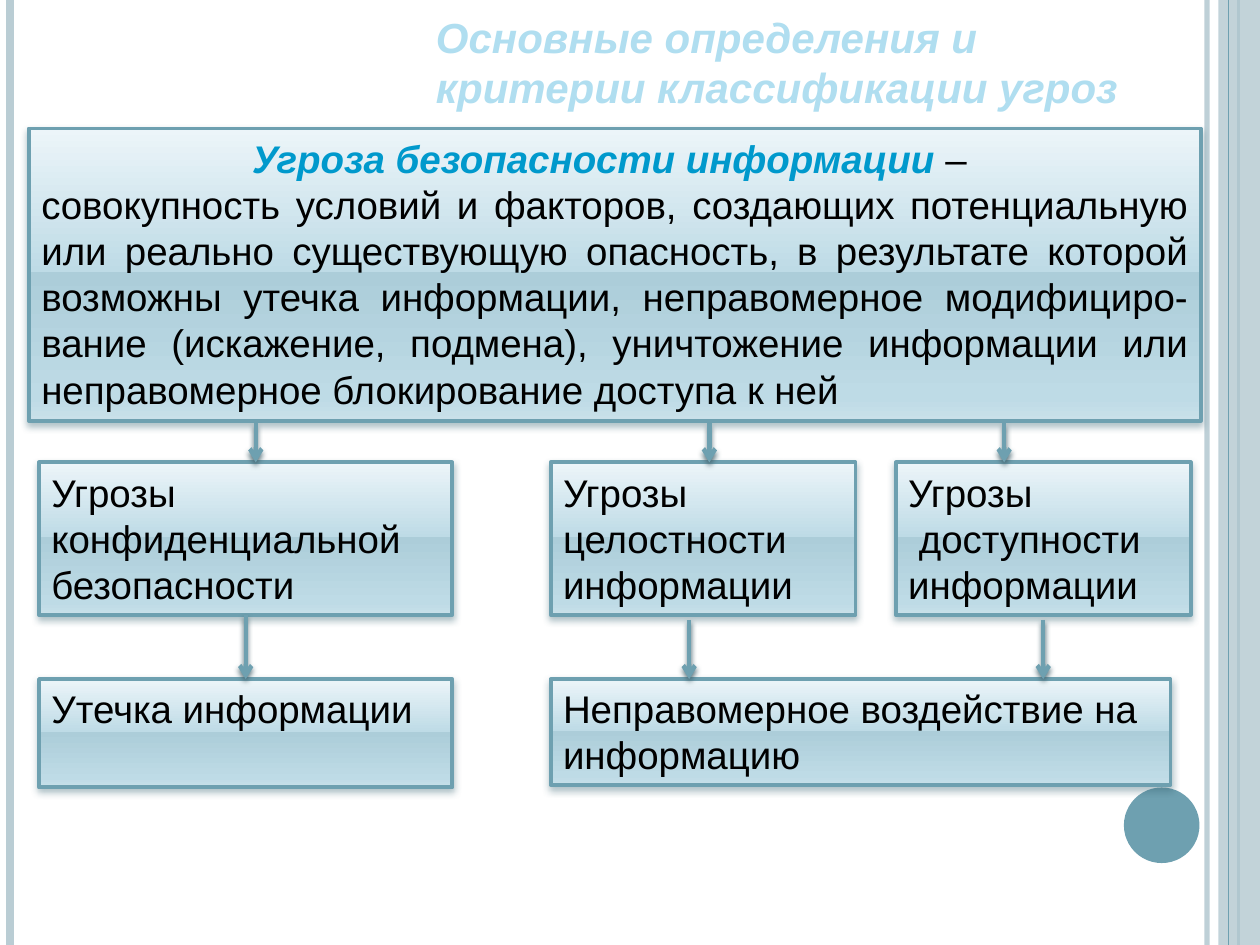
from dataclasses import dataclass, field
from typing import Optional

from lxml import etree
from pptx import Presentation
from pptx import util as u
from pptx.dml.color import RGBColor
from pptx.enum import shapes, text
from pptx.oxml.ns import qn

COLUMNS, ROWS = 100, 75
LEFT, CENTER, JUSTIFY = text.PP_ALIGN.LEFT, text.PP_ALIGN.CENTER, text.PP_ALIGN.JUSTIFY


@dataclass(frozen=True)
class Theme:
    font: str = "Arial"
    title_size: float = 24
    body_size: float = 22
    ink: str = "000000"
    term: str = "0099CC"
    accent: str = "6EA0B0"
    rail: str = "BACDD4"
    title_outline: str = "6599AA"
    title_stops: tuple = ((0, "C9E4EF"), (9, "B0DEF0"), (50, "166078"), (79, "B0DEF0"), (100, "C9E4EF"))
    box_stops: tuple = ((0, "ECF5F9"), (49, "BEDBE6"), (49, "ACCDD9"), (92, "BEDBE6"), (100, "C9E0E9"))
    box_shadow: tuple = ("376472", 38, 4, 2)  # colour, opacity %, blur pt, distance pt
    arrow_shadow: tuple = ("44636D", 83, 3.1, 2)
    box_line: float = 2.25
    arrow_line: float = 2.5


THEME = Theme()


@dataclass(frozen=True)
class Run:
    text: str
    color: str = THEME.ink
    strong: bool = False


@dataclass(frozen=True)
class Paragraph:
    runs: tuple
    align: int = LEFT


@dataclass(frozen=True)
class Box:
    column: float
    row: float
    width: float
    height: float
    paragraphs: tuple = field(default=())
    grows: bool = True


@dataclass(frozen=True)
class Stroke:
    column: float
    top: float
    bottom: float
    color: str = THEME.accent
    width: float = THEME.arrow_line
    opacity: int = 100
    joins: Optional[tuple] = None  # names of the boxes above and below


def plain(*lines: str) -> tuple:
    return tuple(Paragraph((Run(line),)) for line in lines)


RAILS = (
    Stroke(95.8, 0, ROWS, THEME.rail, 3, 93),
    Stroke(0.8, 0, ROWS, THEME.rail, 4.5),
    Stroke(98.3, 0, ROWS, THEME.accent, 1.5),
)
INNER_RAIL = Stroke(97.5, 0, ROWS, THEME.accent, 0.75)
BAND = Box(96.7, 0, 3.3, ROWS)
DOT = Box(89.2, 62.5, 6, 6)
TITLE = Box(33.6, 0, 62.5, 9.4)

KIND_ROW, EFFECT_ROW, KIND_HEIGHT = 36.7, 53.9, 12.1
BOXES = {
    "definition": Box(2.3, 10.2, 93, 23.2, (
        Paragraph((Run("Угроза безопасности информации ", THEME.term, True), Run("– ")), CENTER),
        Paragraph((Run(
            "совокупность условий и факторов, создающих потенциальную или реально "
            "существующую опасность, в результате которой возможны утечка информации, "
            "неправомерное модифициро-вание (искажение, подмена), уничтожение информации "
            "или неправомерное блокирование доступа к ней"),), JUSTIFY))),
    "confidentiality": Box(3.1, KIND_ROW, 32.8, KIND_HEIGHT,
                           plain("Угрозы конфиденциальной безопасности")),
    "integrity": Box(43.7, KIND_ROW, 24.2, KIND_HEIGHT, plain("Угрозы целостности информации")),
    "availability": Box(71.1, KIND_ROW, 23.4, KIND_HEIGHT,
                        plain("Угрозы", " доступности информации")),
    "leak": Box(3.1, EFFECT_ROW, 32.8, 8.6, plain("Утечка информации"), grows=False),
    "influence": Box(43.7, EFFECT_ROW, 49.2, 8.4,
                     plain("Неправомерное воздействие на информацию")),
}
ARROWS = (
    *(Stroke(column, 33.6, KIND_ROW) for column in (20.3, 56.3, 79.7)),
    *(Stroke(column, 49.2, EFFECT_ROW) for column in (82.8, 54.7)),
    Stroke(19.5, KIND_ROW + KIND_HEIGHT, EFFECT_ROW, joins=("confidentiality", "leak")),
)


def assign(target, values: dict) -> None:
    for name, value in values.items():
        setattr(target, name, value)


def grid(presentation, column: float, row: float) -> tuple:
    return (round(presentation.slide_width * column / COLUMNS),
            round(presentation.slide_height * row / ROWS))


def frame(presentation, box: Box) -> tuple:
    return grid(presentation, box.column, box.row) + grid(presentation, box.width, box.height)


def add_color(parent, color: str, opacity: int = 100) -> None:
    node = etree.SubElement(parent, qn("a:srgbClr"), val=color)
    if opacity < 100:
        etree.SubElement(node, qn("a:alpha"), val=str(opacity * 1000))


def paint_gradient(fill, properties, stops: tuple) -> None:
    """Fill from top to bottom with any number of colour stops."""
    fill.gradient()
    fill.gradient_angle = 270
    stop_list = properties.find(qn("a:gradFill")).find(qn("a:gsLst"))
    for old in list(stop_list):
        stop_list.remove(old)
    for position, color in stops:
        add_color(etree.SubElement(stop_list, qn("a:gs"), pos=str(position * 1000)), color)


def add_shadow(effects, shadow: tuple) -> None:
    color, opacity, blur, distance = shadow
    node = etree.SubElement(effects, qn("a:outerShdw"), blurRad=str(u.Pt(blur)),
                            dist=str(u.Pt(distance)), dir="5400000", rotWithShape="0")
    add_color(node, color, opacity)


def set_opacity(properties, opacity: int) -> None:
    if opacity < 100:
        color = properties.find(qn("a:solidFill")).find(qn("a:srgbClr"))
        etree.SubElement(color, qn("a:alpha"), val=str(opacity * 1000))


def draw_plain(presentation, slide, kind, box: Box, color: str, opacity: int = 100) -> None:
    shape = slide.shapes.add_shape(kind, *frame(presentation, box))
    shape.shadow.inherit = False
    shape.fill.solid()
    shape.fill.fore_color.rgb = RGBColor.from_string(color)
    set_opacity(shape.element.spPr, opacity)
    shape.line.fill.background()


def draw_stroke(presentation, slide, stroke: Stroke):
    connector = slide.shapes.add_connector(
        shapes.MSO_CONNECTOR.STRAIGHT,
        *grid(presentation, stroke.column, stroke.top),
        *grid(presentation, stroke.column, stroke.bottom))
    connector.line.color.rgb = RGBColor.from_string(stroke.color)
    connector.line.width = u.Pt(stroke.width)
    properties = connector.element.spPr
    set_opacity(properties.find(qn("a:ln")), stroke.opacity)
    return connector, etree.SubElement(properties, qn("a:effectLst"))


def draw_arrow(presentation, slide, stroke: Stroke, drawn: dict) -> None:
    connector, effects = draw_stroke(presentation, slide, stroke)
    add_shadow(effects, THEME.arrow_shadow)
    etree.SubElement(connector.element.spPr.find(qn("a:ln")), qn("a:tailEnd"), type="arrow")
    if stroke.joins:
        above, below = stroke.joins
        connector.begin_connect(drawn[above], 2)
        connector.end_connect(drawn[below], 0)


def draw_box(presentation, slide, box: Box):
    shape = slide.shapes.add_shape(shapes.MSO_SHAPE.RECTANGLE, *frame(presentation, box))
    paint_gradient(shape.fill, shape.element.spPr, THEME.box_stops)
    shape.line.color.rgb = RGBColor.from_string(THEME.accent)
    shape.line.width = u.Pt(THEME.box_line)
    shape.shadow.inherit = False
    add_shadow(shape.element.spPr.find(qn("a:effectLst")), THEME.box_shadow)
    fit = text.MSO_AUTO_SIZE.SHAPE_TO_FIT_TEXT if box.grows else text.MSO_AUTO_SIZE.NONE
    body = shape.text_frame
    assign(body, {"word_wrap": True, "auto_size": fit, "vertical_anchor": text.MSO_ANCHOR.TOP})
    for index, content in enumerate(box.paragraphs):
        paragraph = body.add_paragraph() if index else body.paragraphs[0]
        paragraph.alignment = content.align
        for part in content.runs:
            run = paragraph.add_run()
            run.text = part.text
            assign(run.font, {"name": THEME.font, "size": u.Pt(THEME.body_size),
                              "bold": part.strong, "italic": part.strong})
            run.font.color.rgb = RGBColor.from_string(part.color)
    return shape


def write_title(presentation, slide) -> None:
    title = slide.shapes.title
    assign(title, dict(zip(("left", "top", "width", "height"), frame(presentation, TITLE))))
    assign(title.text_frame, {"word_wrap": True, "auto_size": text.MSO_AUTO_SIZE.NONE,
                              "vertical_anchor": text.MSO_ANCHOR.BOTTOM})
    paragraph = title.text_frame.paragraphs[0]
    paragraph.alignment = LEFT
    run = paragraph.add_run()
    run.text = "Основные определения и критерии классификации угроз"
    assign(run.font, {"name": THEME.font, "size": u.Pt(THEME.title_size),
                      "bold": True, "italic": True})
    properties = run.font.fill and run._r.get_or_add_rPr()
    paint_gradient(run.font.fill, properties, THEME.title_stops)
    outline = etree.Element(qn("a:ln"), w=str(u.Pt(0.83)))
    add_color(etree.SubElement(outline, qn("a:solidFill")), THEME.title_outline)
    properties.insert(0, outline)


def main() -> None:
    presentation = Presentation()
    assign(presentation, {"slide_width": u.Inches(10), "slide_height": u.Inches(7.5)})
    slide = presentation.slides.add_slide(presentation.slide_layouts[5])
    for rail in RAILS:
        draw_stroke(presentation, slide, rail)
    draw_plain(presentation, slide, shapes.MSO_SHAPE.RECTANGLE, BAND, THEME.rail, 87)
    draw_stroke(presentation, slide, INNER_RAIL)
    draw_plain(presentation, slide, shapes.MSO_SHAPE.OVAL, DOT, THEME.accent)
    write_title(presentation, slide)
    drawn = {name: draw_box(presentation, slide, box) for name, box in BOXES.items()}
    for arrow in ARROWS:
        draw_arrow(presentation, slide, arrow, drawn)
    presentation.save("out.pptx")


if __name__ == "__main__":
    main()
